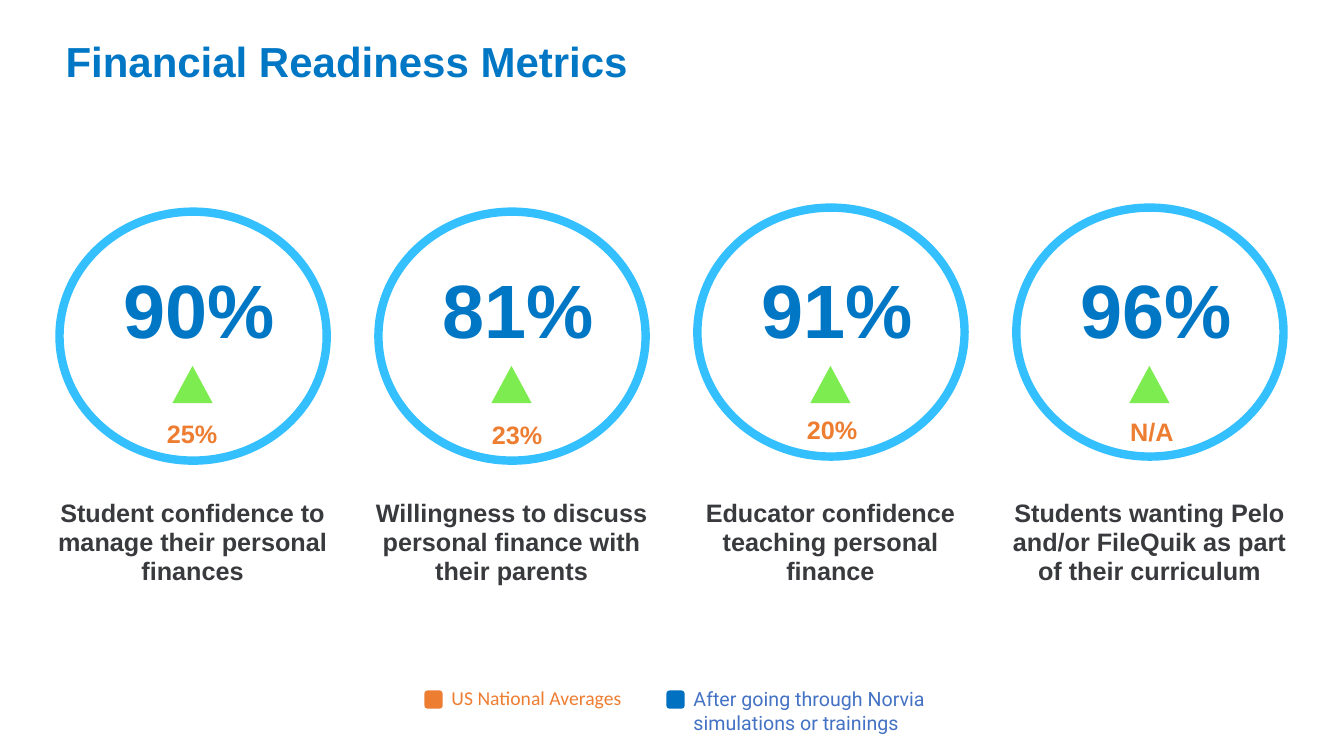
from pptx import Presentation
from pptx.dml.color import RGBColor
from pptx.enum.shapes import MSO_SHAPE
from pptx.enum.text import MSO_ANCHOR, MSO_AUTO_SIZE, PP_ALIGN
from pptx.util import Inches, Pt

BLUE = RGBColor(0x00, 0x77, 0xC5)
SKY = RGBColor(0x34, 0xBF, 0xFF)
GREEN = RGBColor(0x7D, 0xEC, 0x50)
ORANGE = RGBColor(0xED, 0x7D, 0x31)
DARK = RGBColor(0x39, 0x3A, 0x3D)
WHITE = RGBColor(0xFF, 0xFF, 0xFF)
KEY = RGBColor(0x00, 0x70, 0xC0)
INDIGO = RGBColor(0x44, 0x72, 0xC4)

LEFT, STEP = 0.59, 9.49 / 3
METRICS = [
    ("90%", "25%", "Student confidence to manage their personal finances",
     2.1, 0.91, 4.1),
    ("81%", "23%", "Willingness to discuss personal finance with their parents",
     2.1, 0.97, 4.11),
    ("91%", "20%", "Educator confidence\nteaching personal finance",
     2.06, 0.93, 4.06),
    ("96%", "N/A", "Students wanting Pelo and/or FileQuik as part of their curriculum",
     2.06, 0.94, 4.08),
]
LEGEND = [
    (4.21, ORANGE, "US National Averages", (4.38, 6.76, 2.24, 0.34), "Calibri", ORANGE),
    (6.61, KEY, "After going through Norvia simulations or trainings",
     (6.78, 6.77, 2.5, 0.57), "Roboto", INDIGO),
]


class Board:
    """Draws styled elements on the current slide."""

    font = "Arial"

    def __init__(self, deck):
        self.slide = deck.slides.add_slide(deck.slide_layouts[5])

    def label(self, shape, text, size, color, font=font, bold=True,
              align=PP_ALIGN.CENTER, anchor=MSO_ANCHOR.TOP, pad=0.05, space=0.95):
        frame = shape.text_frame
        frame.text = text
        frame.word_wrap = True
        frame.auto_size = MSO_AUTO_SIZE.NONE
        frame.vertical_anchor = anchor
        frame.margin_left = frame.margin_right = Inches(0.1)
        frame.margin_top = frame.margin_bottom = Inches(pad)
        for line in frame.paragraphs:
            line.alignment = align
            line.line_spacing = space
            line.font.name = font
            line.font.size = Pt(size)
            line.font.bold = bold
            line.font.color.rgb = color

    def title(self, text, box):
        shape = self.slide.shapes.title
        shape.left, shape.top, shape.width, shape.height = map(Inches, box)
        self.label(shape, text, 30, BLUE, align=PP_ALIGN.LEFT)

    def text(self, text, box, size, color, **style):
        shape = self.slide.shapes.add_textbox(*map(Inches, box))
        self.label(shape, text, size, color, **style)

    def shape(self, kind, box, fill, line=None):
        shape = self.slide.shapes.add_shape(kind, *map(Inches, box))
        shape.shadow.inherit = False
        shape.fill.solid()
        shape.fill.fore_color.rgb = fill
        if line:
            shape.line.color.rgb = line
            shape.line.width = Pt(6)
        else:
            shape.line.fill.background()
        return shape

    def metric(self, left, value, base, topic, top, shift, low):
        self.shape(MSO_SHAPE.OVAL, (left, top, 2.65, 2.47), WHITE, SKY)
        self.text(value, (left + 0.13, 2.54, 2.51, 1.12), 54, BLUE,
                  anchor=MSO_ANCHOR.MIDDLE, pad=0.1)
        self.text(topic, (left - 0.19, 4.91, 3.02, 1.01), 18, DARK)
        self.shape(MSO_SHAPE.ISOSCELES_TRIANGLE, (left + 1.12, 3.63, 0.4, 0.37), GREEN)
        note = self.shape(MSO_SHAPE.RECTANGLE, (left + shift, low, 0.81, 0.34), WHITE)
        self.label(note, base, 18, ORANGE, space=1.0)

    def legend(self, left, fill, text, box, font, color):
        self.shape(MSO_SHAPE.ROUNDED_RECTANGLE, (left, 6.85, 0.18, 0.18), fill)
        self.text(text, box, 14, color, font=font, bold=False,
                  align=PP_ALIGN.LEFT, space=1.0)


def main():
    deck = Presentation()
    deck.slide_width, deck.slide_height = Inches(13.33), Inches(7.5)
    board = Board(deck)
    board.title("Financial Readiness Metrics", (0.55, 0.34, 12.15, 0.6))
    for i, metric in enumerate(METRICS):
        board.metric(LEFT + i * STEP, *metric)
    for entry in LEGEND:
        board.legend(*entry)
    deck.save("out.pptx")


if __name__ == "__main__":
    main()
